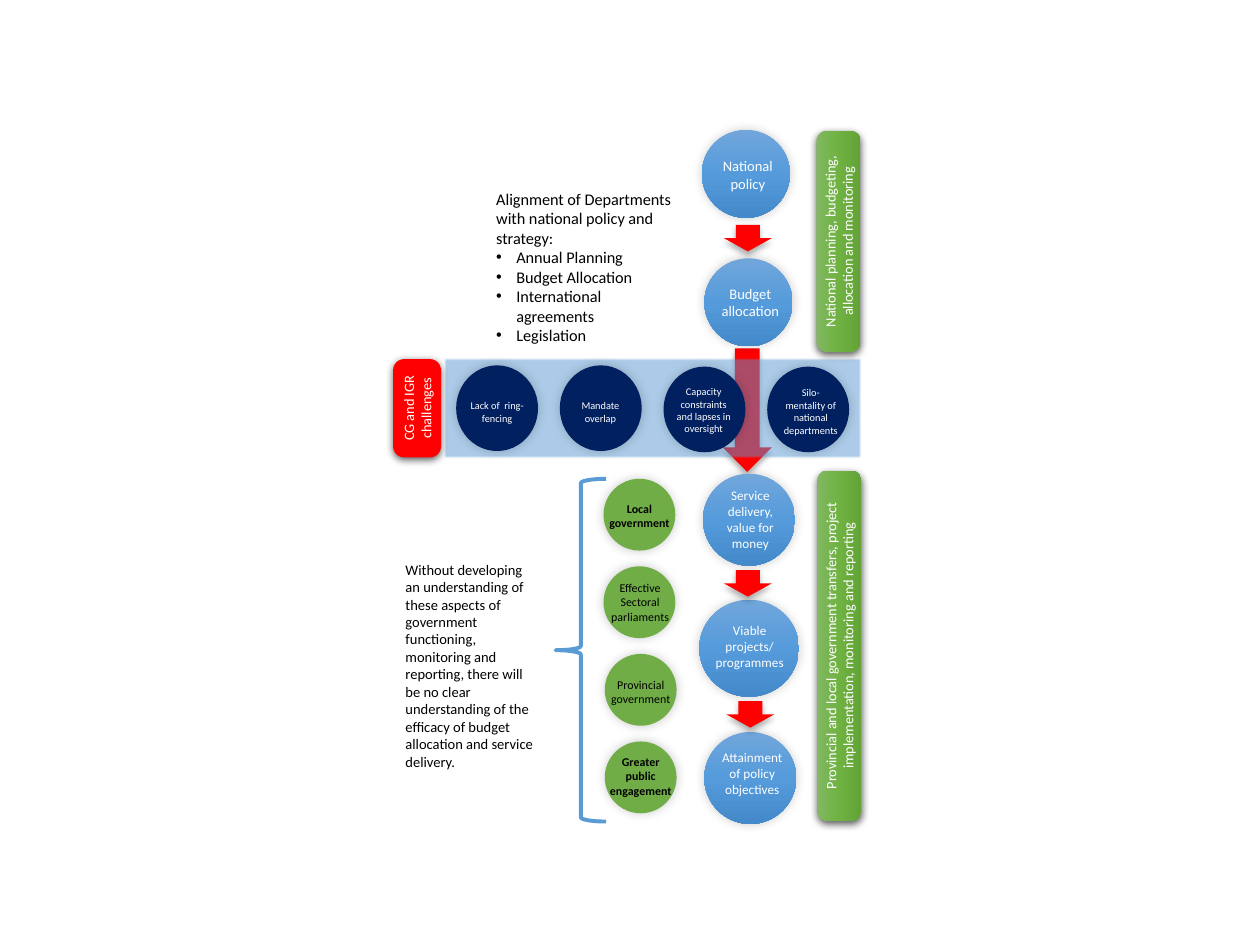
"""Build the slide showing the flow from national policy to policy objectives."""
import pptx
import pptx.dml.color
import pptx.enum.shapes
import pptx.enum.text
import pptx.oxml
import pptx.util
from pptx.util import Inches

COLORS = {
    "red": "FF0000", "navy": "002060", "green": "70AD47", "blue": "5B9BD5",
    "white": "FFFFFF", "black": "000000",
}
GRADIENTS = {
    "blue gradient": ["71A6DB", "559BDB", "448ACA"],
    "green gradient": ["81B861", "6FB242", "62A336"],
}
SHADOWS = {"arrow": (32, 3.5, 2.2, 90), "circle": (20, 6, 0, 315), "bar": (63, 4.5, 1.5, 90)}
NAMESPACE = 'xmlns:a="http://schemas.openxmlformats.org/drawingml/2006/main"'
SHAPES = pptx.enum.shapes.MSO_SHAPE
CENTER = pptx.enum.text.PP_ALIGN.CENTER

presentation = pptx.Presentation()
presentation.slide_width = Inches(10)
presentation.slide_height = Inches(7.5)
slide = presentation.slides.add_slide(presentation.slide_layouts[6])


def add_shape(kind, box, fill, shadow=None, rotation=0):
    shape = slide.shapes.add_shape(kind, *[Inches(length) for length in box])
    shape.rotation = rotation
    shape.line.fill.background()
    shape.shadow.inherit = False
    properties = shape.element.spPr
    if fill in GRADIENTS:
        stops = "".join(
            f'<a:gs pos="{position}"><a:srgbClr val="{color}"/></a:gs>'
            for position, color in zip((0, 50000, 100000), GRADIENTS[fill])
        )
        gradient = pptx.oxml.parse_xml(
            f'<a:gradFill {NAMESPACE} rotWithShape="1"><a:gsLst>{stops}</a:gsLst>'
            '<a:lin ang="5400000" scaled="0"/></a:gradFill>'
        )
        properties.find(pptx.oxml.ns.qn("a:prstGeom")).addnext(gradient)
    elif fill:
        shape.fill.solid()
        shape.fill.fore_color.rgb = pptx.dml.color.RGBColor.from_string(COLORS[fill])
    else:
        shape.fill.background()
    if shadow:
        alpha, blur, distance, angle = SHADOWS[shadow]
        effects = properties.find(pptx.oxml.ns.qn("a:effectLst"))
        effects.append(pptx.oxml.parse_xml(
            f'<a:outerShdw {NAMESPACE} blurRad="{pptx.util.Pt(blur)}" dist="{pptx.util.Pt(distance)}" '
            f'dir="{angle * 60000}" rotWithShape="0"><a:srgbClr val="{COLORS["black"]}">'
            f'<a:alpha val="{alpha * 1000}"/></a:srgbClr></a:outerShdw>'
        ))
    return shape


def add_text(lines, size, color, box=None, shape=None, bold=False, alignment=CENTER):
    holder = shape or slide.shapes.add_textbox(*[Inches(length) for length in box])
    frame = holder.text_frame
    frame.word_wrap = True
    frame.text = "\n".join(lines)
    for paragraph in frame.paragraphs:
        paragraph.alignment = alignment
        paragraph.font.name = "Calibri"
        paragraph.font.size = pptx.util.Pt(size)
        paragraph.font.bold = bold
        paragraph.font.color.rgb = pptx.dml.color.RGBColor.from_string(COLORS[color])
    return frame


add_shape(SHAPES.RIGHT_ARROW, (5.44, 3.06, 0.98, 0.39), "red", "arrow", 90)

flow_steps = [
    ((5.57, 1.03, 0.7, 0.7), (5.57, 1.2, 0.73, 0.38), 8.3, ["National policy"]),
    ((5.59, 2.05, 0.7, 0.7), (5.59, 2.21, 0.73, 0.38), 8.3, ["Budget allocation"]),
    ((5.58, 3.76, 0.73, 0.73), (5.66, 3.82, 0.59, 0.61), 7.5, ["Service delivery, value for money"]),
    ((5.55, 4.76, 0.79, 0.77), (5.57, 4.89, 0.76, 0.48), 7.5, ["Viable projects/", "programmes"]),
    ((5.59, 5.81, 0.73, 0.73), (5.61, 5.9, 0.72, 0.48), 7.5, ["Attainment of policy objectives"]),
]
for circle_box, text_box, size, lines in flow_steps:
    add_shape(SHAPES.OVAL, circle_box, "blue gradient", "circle")
    add_text(lines, size, "white", text_box)

for left, top in [(5.83, 1.7), (5.83, 4.44), (5.85, 5.48)]:
    add_shape(SHAPES.RIGHT_ARROW, (left, top, 0.21, 0.38), "red", "arrow", 90)

alignment_frame = add_text(
    ["Alignment of Departments with national policy and strategy:", "Annual Planning",
     "Budget Allocation", "International agreements", "Legislation"],
    9.3, "black", (3.84, 1.45, 1.63, 1.36), alignment=pptx.enum.text.PP_ALIGN.LEFT,
)
for paragraph in alignment_frame.paragraphs[1:]:
    paragraph_properties = paragraph._p.get_or_add_pPr()
    paragraph_properties.set("marL", str(Inches(0.16)))
    paragraph_properties.set("indent", str(-Inches(0.16)))
    for bullet in ('<a:buFont {} typeface="Arial"/>', '<a:buChar {} char="•"/>'):
        paragraph_properties.append(pptx.oxml.parse_xml(bullet.format(NAMESPACE)))

participants = [
    ("Local government", 4.79, (4.73, 3.93, 0.69, 0.33), True),
    ("Effective Sectoral parliaments", 4.79, (4.72, 4.56, 0.72, 0.44), False),
    ("Provincial government", 4.8, (4.74, 5.33, 0.69, 0.33), False),
    ("Greater public engagement", 4.8, (4.74, 5.94, 0.69, 0.44), True),
]
for index, (label, left, text_box, bold) in enumerate(participants):
    add_shape(SHAPES.OVAL, (left, 3.8 + 0.695 * index, 0.57, 0.57), "green", "circle")
    add_text([label], 6.8, "black", text_box, bold=bold)

band = add_shape(SHAPES.RECTANGLE, (3.52, 2.84, 3.32, 0.8), "blue")
band_color = band.element.spPr.find(".//" + pptx.oxml.ns.qn("a:srgbClr"))
band_color.append(pptx.oxml.parse_xml(f'<a:alpha {NAMESPACE} val="50000"/>'))
band_effects = band.element.spPr.find(pptx.oxml.ns.qn("a:effectLst"))
band_effects.append(pptx.oxml.parse_xml(f'<a:softEdge {NAMESPACE} rad="12700"/>'))

challenges = [
    ("Lack of  ring-fencing", 2.9, (3.62, 3.12, 0.65, 0.3)),
    ("Mandate overlap", 2.9, (4.44, 3.12, 0.65, 0.3)),
    ("Capacity constraints and lapses in oversight", 2.91, (5.26, 3.01, 0.65, 0.5)),
    ("Silo-mentality of national departments", 2.91, (6.11, 3.02, 0.65, 0.5)),
]
for index, (label, top, text_box) in enumerate(challenges):
    add_shape(SHAPES.OVAL, (3.62 + 0.823 * index, top, 0.65, 0.68), "navy", "circle")
    add_text([label], 5.9, "white", text_box)

add_text(
    ["Without developing an understanding of these aspects of government functioning, "
     "monitoring and reporting, there will be no clear understanding of the efficacy of "
     "budget allocation and service delivery."],
    8.3, "black", (3.12, 4.4, 1.23, 1.78), alignment=pptx.enum.text.PP_ALIGN.LEFT,
)

brace = add_shape(SHAPES.RIGHT_BRACE, (4.41, 3.8, 0.4, 2.72), None, rotation=180)
brace.line.color.rgb = pptx.dml.color.RGBColor.from_string(COLORS["blue"])
brace.line.width = pptx.util.Pt(2.25)

bars = [
    ((5.78, 1.74, 1.75, 0.35), "green gradient", "National planning, budgeting, allocation and monitoring"),
    ((5.27, 4.95, 2.78, 0.35), "green gradient",
     "Provincial and local government transfers, project implementation, monitoring and reporting"),
    ((2.92, 3.05, 0.78, 0.38), "red", "CG and IGR challenges"),
]
for box, fill, label in bars:
    bar = add_shape(SHAPES.ROUNDED_RECTANGLE, box, fill, "bar", 270)
    bar.adjustments[0] = 0.23
    bar_frame = add_text([label], 8.2, "white", shape=bar)
    bar_frame.vertical_anchor = pptx.enum.text.MSO_ANCHOR.MIDDLE

presentation.save("out.pptx")
